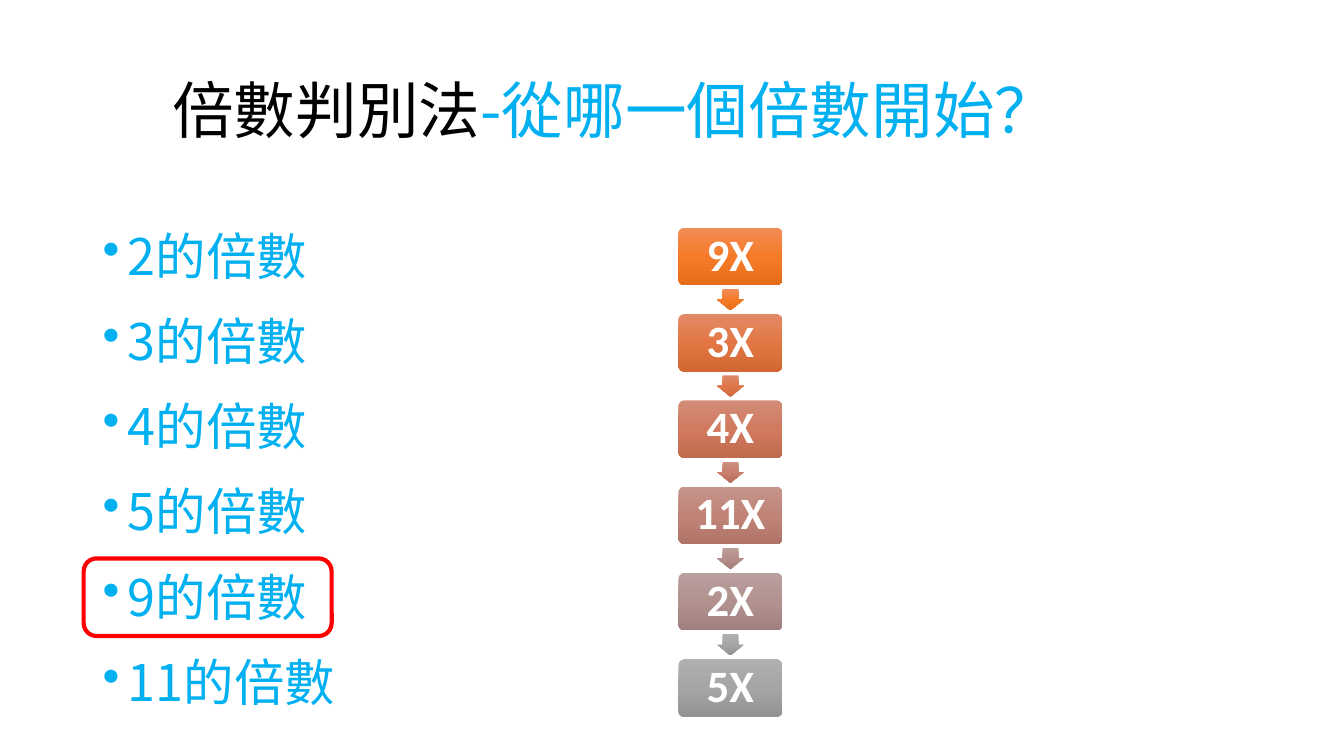
from copy import deepcopy
from dataclasses import dataclass

from lxml import etree
from pptx import Presentation
from pptx.dml.color import RGBColor
from pptx.enum.shapes import MSO_SHAPE
from pptx.enum.text import MSO_ANCHOR, PP_ALIGN
from pptx.oxml.ns import qn
from pptx.util import Inches, Pt

ROUNDED = MSO_SHAPE.ROUNDED_RECTANGLE
DOWN_ARROW = MSO_SHAPE.DOWN_ARROW
MIDDLE = MSO_ANCHOR.MIDDLE
CENTER = PP_ALIGN.CENTER


@dataclass(frozen=True)
class Theme:
    """Colours, fonts and type sizes of the slide."""
    black: str = "000000"
    blue: str = "00B0F0"
    red: str = "FF0000"
    white: str = "FFFFFF"
    chinese_font: str = "Noto Sans CJK SC"
    step_font: str = "Calibri"
    title_size: int = 44
    list_size: int = 36
    step_size: int = 32


THEME = Theme()

MULTIPLES = [2, 3, 4, 5, 9, 11]
STEPS = [
    ("9X", ("F18C57", "F67B28", "E56C19")),
    ("3X", ("E18A66", "E37744", "D26734")),
    ("4X", ("D28C78", "D17A5F", "C06A4E")),
    ("11X", ("C5948B", "C08478", "AF7367")),
    ("2X", ("B99F9E", "B2928F", "A0807E")),
    ("5X", ("AFAFAF", "A5A5A5", "939393")),
]
ARROW_COLOURS = [
    ("F18C57", "F67B28", "E56C19"),
    ("DD8A6A", "DF774A", "CE673A"),
    ("CB9082", "C87F6C", "B76E5B"),
    ("BC9D98", "B68E89", "A47D77"),
    ("AFAFAF", "A5A5A5", "939393"),
]


def apply_format(target, values):
    """Set each attribute named in a dict of format values."""
    for name, value in values.items():
        setattr(target, name, value)


def add_span(para, text, font, size, colour, bold=False):
    """Append a run with its font set for Latin and East Asian text."""
    span = para.add_run()
    span.text = text
    apply_format(span.font, {"name": font, "size": Pt(size), "bold": bold})
    span.font.color.rgb = RGBColor.from_string(colour)
    latin = span.font._element.find(qn("a:latin"))
    east_asian = etree.Element(qn("a:ea"), typeface=font)
    latin.addnext(east_asian)


def add_bullet(para):
    """Give a paragraph a hanging round bullet."""
    properties = para._p.get_or_add_pPr()
    indent = Inches(0.25)
    properties.set("marL", str(indent))
    properties.set("indent", str(-indent))
    etree.SubElement(properties, qn("a:buChar"), char="•")


def fill_gradient(shape, colours):
    """Fill a shape from top to bottom with three evenly spaced colours."""
    shape.fill.gradient()
    shape.fill.gradient_angle = 270
    stop_list = shape._element.spPr.find(qn("a:gradFill")).find(qn("a:gsLst"))
    stop_list.insert(1, deepcopy(stop_list[0]))
    for index, stop in enumerate(shape.fill.gradient_stops):
        stop.position = index / 2
        stop.color.rgb = RGBColor.from_string(colours[index])


def add_block(page, kind, left, top, width, height, adjustments, colours):
    """Draw a borderless gradient shape."""
    block = page.shapes.add_shape(
        kind, Inches(left), Inches(top), Inches(width), Inches(height))
    block.shadow.inherit = False
    for index, value in enumerate(adjustments):
        block.adjustments[index] = value
    fill_gradient(block, colours)
    block.line.fill.background()
    return block


def add_title(page, left, top, width, height):
    """Place the two-coloured title in its box."""
    box = page.shapes.add_textbox(
        Inches(left), Inches(top), Inches(width), Inches(height))
    apply_format(box.text_frame, {"word_wrap": True, "vertical_anchor": MIDDLE})
    para = box.text_frame.paragraphs[0]
    para.line_spacing = 0.9
    for text, colour in (("倍數判別法", THEME.black),
                         ("-從哪一個倍數開始？", THEME.blue)):
        add_span(para, text, THEME.chinese_font, THEME.title_size, colour)


def add_multiples(page, left, top, width, height):
    """Place the bulleted list of multiples and frame the chosen one."""
    box = page.shapes.add_textbox(
        Inches(left), Inches(top), Inches(width), Inches(height))
    frame = box.text_frame
    frame.word_wrap = True
    for index, number in enumerate(MULTIPLES):
        para = frame.add_paragraph() if index else frame.paragraphs[0]
        apply_format(para, {"line_spacing": 0.9, "space_after": Pt(12),
                            "space_before": Pt(10 if index else 0)})
        add_bullet(para)
        add_span(para, f"{number}的倍數", THEME.chinese_font,
                 THEME.list_size, THEME.blue)
    marker = page.shapes.add_shape(
        ROUNDED, Inches(left - 0.09), Inches(top + 3.29),
        Inches(2.46), Inches(0.77))
    marker.shadow.inherit = False
    marker.fill.background()
    marker.line.color.rgb = RGBColor.from_string(THEME.red)
    marker.line.width = Pt(3)


def add_steps(page, left, top, width, height):
    """Stack the steps evenly in the box with an arrow in each gap."""
    card_height, arrow_width, arrow_height = 0.57, 0.26, 0.21
    pitch = (height - card_height) / (len(STEPS) - 1)
    gap = pitch - card_height
    for index, (label, colours) in enumerate(STEPS):
        card_top = top + index * pitch
        card = add_block(page, ROUNDED, left, card_top, width, card_height,
                         [0.1], colours)
        inset = Inches(0.1)
        apply_format(card.text_frame, {
            "word_wrap": True, "vertical_anchor": MIDDLE,
            "margin_left": inset, "margin_right": inset,
            "margin_top": inset, "margin_bottom": inset})
        para = card.text_frame.paragraphs[0]
        apply_format(para, {"alignment": CENTER, "line_spacing": 0.9})
        add_span(para, label, THEME.step_font, THEME.step_size,
                 THEME.white, bold=True)
        if index < len(ARROW_COLOURS):
            add_block(page, DOWN_ARROW, left + (width - arrow_width) / 2,
                      card_top + card_height + (gap - arrow_height) / 2,
                      arrow_width, arrow_height, [0.6, 0.5],
                      ARROW_COLOURS[index])


def main():
    """Build the slide and save it."""
    deck = Presentation()
    apply_format(deck, {"slide_width": Inches(13.33),
                        "slide_height": Inches(7.5)})
    page = deck.slides.add_slide(deck.slide_layouts[6])
    add_title(page, 1.61, 0.4, 10.8, 1.45)
    add_multiples(page, 0.92, 2.25, 11.5, 4.36)
    add_steps(page, 6.73, 2.26, 1.03, 4.85)
    deck.save("out.pptx")


if __name__ == "__main__":
    main()
